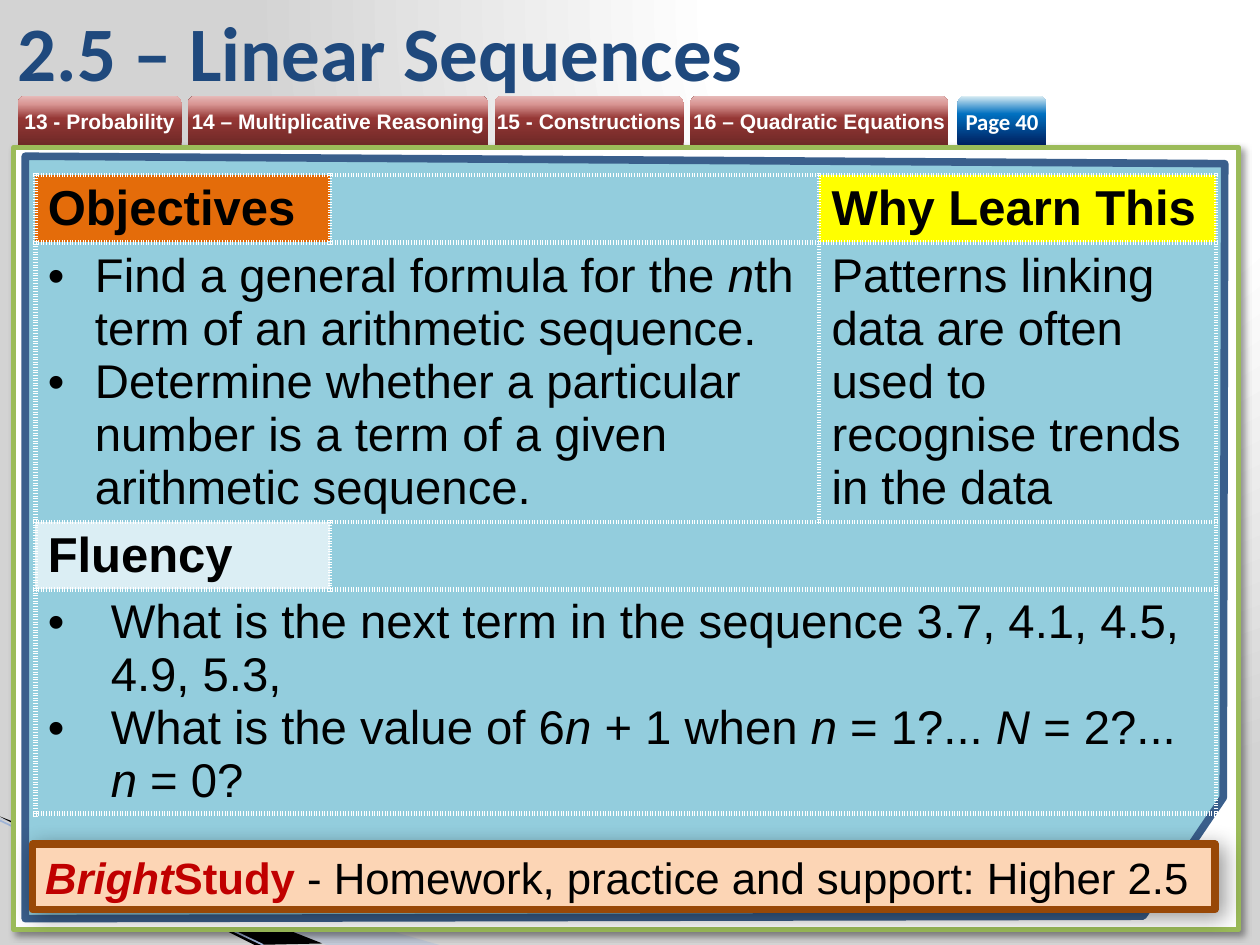
from dataclasses import dataclass

from lxml import etree
from pptx import Presentation
from pptx.dml.color import RGBColor
from pptx.enum.shapes import MSO_CONNECTOR, MSO_SHAPE
from pptx.enum.text import MSO_ANCHOR, MSO_AUTO_SIZE, PP_ALIGN
from pptx.oxml.ns import qn
from pptx.util import Cm, Pt

RECTANGLE = MSO_SHAPE.RECTANGLE
TAB_SHAPE = MSO_SHAPE.ROUND_2_SAME_RECTANGLE
STRAIGHT = MSO_CONNECTOR.STRAIGHT
MIDDLE = MSO_ANCHOR.MIDDLE
CENTER, LEFT = PP_ALIGN.CENTER, PP_ALIGN.LEFT
GROW = MSO_AUTO_SIZE.SHAPE_TO_FIT_TEXT

COLORS = {
    "white": "FFFFFF", "black": "000000", "title": "1F497D", "green": "9BBB59",
    "panel": "93CDDD", "panel_line": "3A5F8C", "streak": "A7B9DB", "thin": "9EB3D6",
    "objectives": "E46C0A", "why": "FFFF00", "fluency": "DBEEF4",
    "footer": "FCD5B5", "footer_line": "984807", "red": "C00000",
}
RED_STOPS = [(0, "6F2927"), (54, "953735"), (83, "D99694"), (100, "E6B9B8")]
BLUE_STOPS = [(0, "002060"), (63, "0070C0"), (100, "DBEEF4")]
BACKGROUND_STOPS = [(0, "FFFFFF"), (40, "FFFFFF"), (100, "D3D3D3")]


@dataclass
class Piece:
    text: str
    size: float = 27
    bold: bool = False
    italic: bool = False
    color: str = "black"
    font: str = "Arial"


@dataclass
class Tab:
    label: str
    left: float
    width: float
    stops: list
    size: float = 12
    font: str = "Arial"


@dataclass
class TableCell:
    row: int
    column: int
    paragraphs: list
    fill: str = ""
    indent: float = 0


def rgb(name: str) -> RGBColor:
    return RGBColor.from_string(COLORS[name])


def child(parent, tag: str, **attributes):
    values = {key: str(value) for key, value in attributes.items()}
    return etree.SubElement(parent, qn(tag), values)


def set_stops(gradient, stops: list) -> None:
    for element in list(gradient):
        gradient.remove(element)
    stop_list = child(gradient, "a:gsLst")
    for position, color in stops:
        stop = child(stop_list, "a:gs", pos=position * 1000)
        child(stop, "a:srgbClr", val=color)


def write_paragraph(paragraph, pieces: list, align=LEFT) -> None:
    paragraph.alignment = align
    for piece in pieces:
        run = paragraph.add_run()
        run.text = piece.text
        font = run.font
        font.name, font.size = piece.font, Pt(piece.size)
        font.bold, font.italic = piece.bold, piece.italic
        font.color.rgb = rgb(piece.color)


def style_shape(shape, fill: str, line: str = "", width: float = 0) -> None:
    shape.shadow.inherit = False
    shape.fill.solid()
    shape.fill.fore_color.rgb = rgb(fill)
    if line:
        shape.line.color.rgb = rgb(line)
        shape.line.width = Pt(width)
    else:
        shape.line.fill.background()


def add_shadow(shape, blur: float) -> None:
    effects = shape._element.spPr.find(qn("a:effectLst"))
    shadow = child(effects, "a:outerShdw", blurRad=Pt(blur), dist=Pt(3),
                   dir=45 * 60000, algn="tl", rotWithShape=0)
    child(child(shadow, "a:srgbClr", val=COLORS["black"]), "a:alpha", val=40000)


def add_outline(slide, points: list, close: bool = True):
    corners = [(Cm(x), Cm(y)) for x, y in points]
    builder = slide.shapes.build_freeform(*corners[0])
    builder.add_line_segments(corners[1:], close=close)
    return builder.convert_to_shape()


def add_tab(slide, tab: Tab) -> None:
    shape = slide.shapes.add_shape(TAB_SHAPE, Cm(tab.left), Cm(1.93), Cm(tab.width), Cm(0.99))
    shape.shadow.inherit = False
    shape.line.fill.background()
    shape.fill.gradient()
    gradient = shape._element.spPr.find(qn("a:gradFill"))
    set_stops(gradient, tab.stops)
    child(gradient, "a:lin", ang=270 * 60000, scaled=0)
    frame = shape.text_frame
    frame.margin_left = frame.margin_right = frame.margin_top = frame.margin_bottom = 0
    frame.vertical_anchor = MIDDLE
    frame.word_wrap = False
    piece = Piece(tab.label, tab.size, bold=True, color="white", font=tab.font)
    write_paragraph(frame.paragraphs[0], [piece], CENTER)


def add_borders(cell) -> None:
    properties = cell._tc.get_or_add_tcPr()
    for side in ("a:lnL", "a:lnR", "a:lnT", "a:lnB"):
        line = child(properties, side, w=Pt(3))
        child(child(line, "a:solidFill"), "a:srgbClr", val=COLORS["white"])
        child(line, "a:prstDash", val="sysDot")


def fill_cell(table, content: TableCell) -> None:
    cell = table.cell(content.row, content.column)
    if content.fill:
        cell.fill.solid()
        cell.fill.fore_color.rgb = rgb(content.fill)
    frame = cell.text_frame
    for index, pieces in enumerate(content.paragraphs):
        paragraph = frame.add_paragraph() if index else frame.paragraphs[0]
        if content.indent:
            properties = paragraph._p.get_or_add_pPr()
            properties.set("marL", str(Cm(content.indent)))
            properties.set("indent", str(-Cm(content.indent)))
            child(properties, "a:buFont", typeface="Arial")
            child(properties, "a:buChar", char="•")
        write_paragraph(paragraph, pieces)


def add_lesson_table(slide) -> None:
    widths, heights = [5.94, 9.86, 8], [1.19, 5.64, 1.02, 3.15]
    table = slide.shapes.add_table(4, 3, Cm(0.71), Cm(3.53), Cm(sum(widths)), Cm(sum(heights))).table
    table.first_row = table.horz_banding = False
    for column, width in zip(table.columns, widths):
        column.width = Cm(width)
    for row, height in zip(table.rows, heights):
        row.height = Cm(height)
    for cell in table.iter_cells():
        add_borders(cell)
        cell.fill.background()
        cell.vertical_anchor = MIDDLE
    for start, end in [((1, 0), (1, 1)), ((2, 1), (2, 2)), ((3, 0), (3, 2))]:
        table.cell(*start).merge(table.cell(*end))

    objectives = [
        [Piece("Find a general formula for the "), Piece("n", italic=True),
         Piece("th term of an arithmetic sequence.")],
        [Piece("Determine whether a particular number is a term of a given arithmetic sequence.")],
    ]
    value_texts = ["What is the value of 6", "n", " + 1 when ", "n ", "= 1?... ",
                   "N ", "= 2?... ", "n ", "= 0?"]
    questions = [
        [Piece("What is the next term in the sequence 3.7, 4.1, 4.5, 4.9, 5.3,")],
        [Piece(text, italic=index % 2 == 1) for index, text in enumerate(value_texts)],
    ]
    reason = "Patterns linking data are often used to recognise trends in the data"
    for content in [
        TableCell(0, 0, [[Piece("Objectives", 28, bold=True)]], "objectives"),
        TableCell(0, 2, [[Piece("Why Learn This", 28, bold=True)]], "why"),
        TableCell(1, 0, objectives, indent=0.95),
        TableCell(1, 2, [[Piece(reason)]]),
        TableCell(2, 0, [[Piece("Fluency", 28, bold=True)]], "fluency"),
        TableCell(3, 0, questions, indent=1.27),
    ]:
        fill_cell(table, content)


def add_backdrop(slide) -> None:
    slide.background.fill.gradient()
    gradient = slide._element.find(".//" + qn("a:gradFill"))
    set_stops(gradient, BACKGROUND_STOPS)
    circle = child(gradient, "a:path", path="circle")
    child(circle, "a:fillToRect", l=65000, b=98000)

    streak = add_outline(slide, [(0, 16.51), (8.86, 19.05), (6.58, 19.05), (0, 16.48)])
    style_shape(streak, "streak")
    color = streak._element.spPr.find(qn("a:solidFill"))[0]
    child(color, "a:alpha", val=40000)
    wedge = add_outline(slide, [(0, 16.46), (6.5, 19.02), (5.13, 19.05), (0.03, 16.48)])
    style_shape(wedge, "black")
    line = slide.shapes.add_connector(STRAIGHT, 0, Cm(16.54), Cm(5.31), Cm(19.05))
    line.line.color.rgb = rgb("thin")
    line.line.width = Pt(0.95)
    child(line._element.spPr, "a:effectLst")

    board = slide.shapes.add_shape(RECTANGLE, Cm(0.28), Cm(2.97), Cm(24.69), Cm(15.77))
    style_shape(board, "white", "green", 3)
    add_shadow(board, 4)


def add_footer(slide) -> None:
    footer = slide.shapes.add_shape(RECTANGLE, Cm(0.66), Cm(17.02), Cm(23.83), Cm(1.32))
    style_shape(footer, "footer", "footer_line", 4.33)
    add_shadow(footer, 13)
    frame = footer.text_frame
    frame.word_wrap, frame.auto_size, frame.vertical_anchor = True, GROW, MIDDLE
    write_paragraph(frame.paragraphs[0], [
        Piece("Bright", 25, bold=True, italic=True, color="red"),
        Piece("Study ", 25, bold=True, color="red"),
        Piece("- Homework, practice and support: Higher 2.5", 25),
    ])


def main() -> None:
    presentation = Presentation()
    presentation.slide_width, presentation.slide_height = Cm(25.4), Cm(19.05)
    slide = presentation.slides.add_slide(presentation.slide_layouts[5])
    add_backdrop(slide)
    title = slide.shapes.title
    title.left, title.top, title.width, title.height = Cm(0.1), Cm(0.13), Cm(21), Cm(1.8)
    title.text_frame.vertical_anchor = MIDDLE
    heading = Piece("2.5 – Linear Sequences", 44, bold=True, color="title", font="Calibri")
    write_paragraph(title.text_frame.paragraphs[0], [heading])

    left = 0.36
    for label, width in [("13 - Probability", 3.3), ("14 – Multiplicative Reasoning", 6.05),
                         ("15 - Constructions", 3.81), ("16 – Quadratic Equations", 5.21)]:
        add_tab(slide, Tab(label, left, width, RED_STOPS))
        left += width + 0.13
    add_tab(slide, Tab("Page 40", 19.3, 1.8, BLUE_STOPS, 13, "Calibri"))

    panel = add_outline(slide, [(0.51, 3.15), (24.69, 3.3), (24.66, 16.08), (23.04, 18.47), (0.51, 18.52)])
    style_shape(panel, "panel", "panel_line", 4.33)
    add_lesson_table(slide)
    add_footer(slide)
    presentation.save("out.pptx")


if __name__ == "__main__":
    main()
